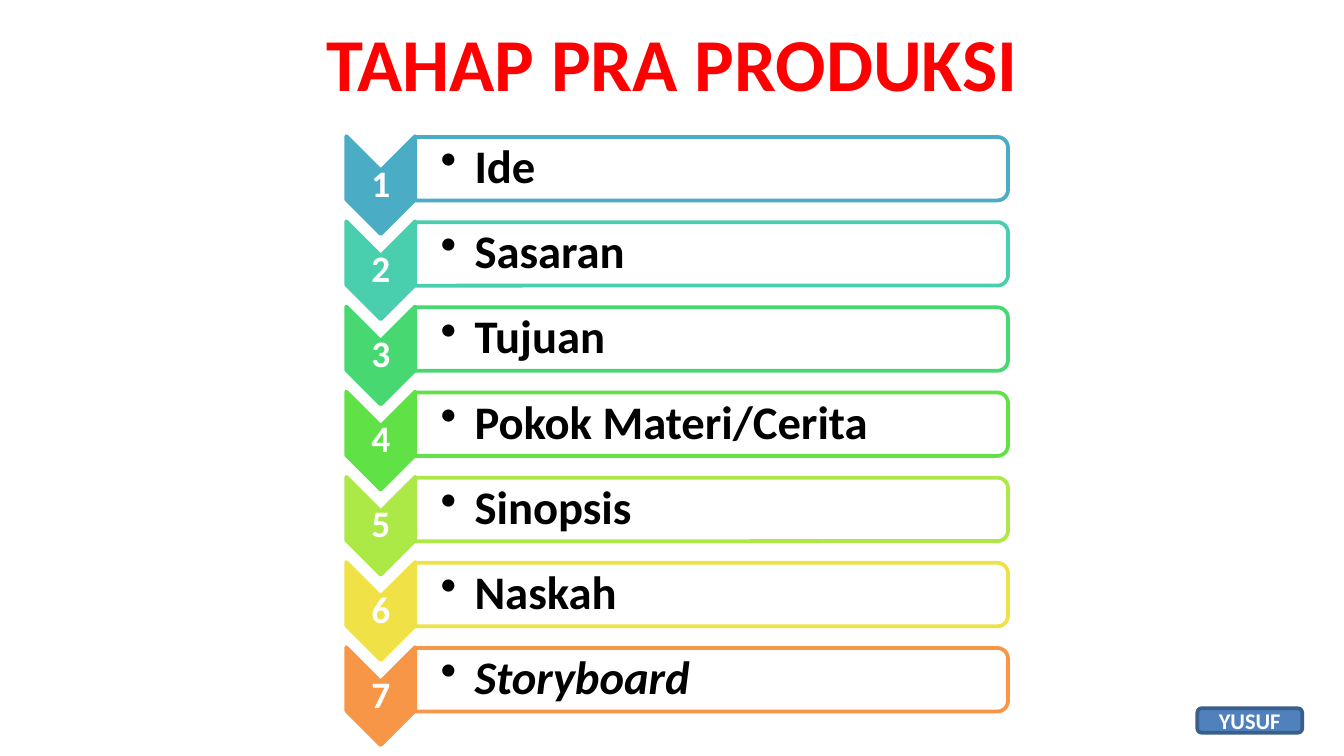
from lxml.etree import SubElement
from pptx import Presentation
from pptx.dml.color import RGBColor
from pptx.enum.shapes import MSO_SHAPE
from pptx.enum.text import MSO_ANCHOR, MSO_AUTO_SIZE, PP_ALIGN
from pptx.oxml.ns import qn
from pptx.util import Cm, Pt

STEPS = [
    ("Ide", "4BACC6"),
    ("Sasaran", "49CFAE"),
    ("Tujuan", "47D872"),
    ("Pokok Materi/Cerita", "60E146"),
    ("Sinopsis", "ACE946"),
    ("Naskah", "F0E146"),
    ("Storyboard", "F79646"),
]
PITCH = 1.61


def color(code):
    return RGBColor.from_string(code)


class Deck:
    face = "Calibri"
    white = "FFFFFF"

    def __init__(self, wide, high):
        self.file = Presentation()
        self.file.slide_width, self.file.slide_height = Cm(wide), Cm(high)
        self.slide = self.file.slides.add_slide(self.file.slide_layouts[5])

    def style(self, para, text, size, ink, align=PP_ALIGN.CENTER):
        para.text, para.alignment = text, align
        font = para.font
        font.name, font.size, font.bold = self.face, Pt(size), True
        font.color.rgb = color(ink)

    def title(self, text, box):
        shape = self.slide.shapes.title
        shape.left, shape.top, shape.width, shape.height = map(Cm, box)
        frame = shape.text_frame
        frame.auto_size = MSO_AUTO_SIZE.NONE
        frame.vertical_anchor = MSO_ANCHOR.TOP
        self.style(frame.paragraphs[0], text, 40, "FF0000")

    def shape(self, kind, box, fill, line, turn=0, alpha=None):
        shape = self.slide.shapes.add_shape(kind, *map(Cm, box))
        shape.rotation = turn
        shape.shadow.inherit = False
        shape.fill.solid()
        shape.fill.fore_color.rgb = color(fill)
        shape.line.color.rgb = color(line)
        shape.line.width = Pt(2)
        if alpha:
            tint = shape._element.spPr.find(qn("a:solidFill")).find(qn("a:srgbClr"))
            SubElement(tint, qn("a:alpha"), val=str(alpha * 1000))
        return shape

    def label(self, box, pad, left):
        frame = self.slide.shapes.add_textbox(*map(Cm, box)).text_frame
        frame.word_wrap = True
        frame.vertical_anchor = MSO_ANCHOR.MIDDLE
        frame.margin_top = frame.margin_bottom = frame.margin_right = Cm(pad)
        frame.margin_left = Cm(left)
        para = frame.paragraphs[0]
        para.line_spacing = 0.9
        return para

    def bullet(self, para, indent):
        props = para._p.get_or_add_pPr()
        props.set("marL", str(Cm(indent)))
        props.set("indent", str(-Cm(indent)))
        SubElement(props, qn("a:buChar"), char="•")

    def step(self, index, text, hue):
        drop = index * PITCH
        # Numbered arrow
        self.shape(MSO_SHAPE.CHEVRON, (6.27, 2.85 + drop, 1.85, 1.3), hue, hue, 90)
        para = self.label((6.55, 3.22 + drop, 1.3, 0.56), 0.03, 0.03)
        self.style(para, str(index + 1), 20, self.white)
        # Bar, rounded on the right
        self.shape(MSO_SHAPE.ROUND_2_SAME_RECTANGLE,
                   (12.85, -2.41 + drop, 1.2, 11.2), self.white, hue, 90, 90)
        para = self.label((7.85, 2.64 + drop, 11.15, 1.09), 0.05, 0.48)
        self.bullet(para, 0.64)
        self.style(para, text, 25, "000000", PP_ALIGN.LEFT)
        para.font.italic = text == "Storyboard"

    def badge(self, text, box):
        shape = self.shape(MSO_SHAPE.ROUNDED_RECTANGLE, box, "4F81BD", "3A5F8C")
        frame = shape.text_frame
        frame.vertical_anchor = MSO_ANCHOR.MIDDLE
        self.style(frame.paragraphs[0], text, 12, self.white)


def main():
    deck = Deck(25.4, 14.29)
    deck.badge("YUSUF", (22.63, 13.39, 1.98, 0.46))
    deck.title("TAHAP PRA PRODUKSI", (1.27, 0.2, 22.86, 1.2))
    for index, (text, hue) in enumerate(STEPS):
        deck.step(index, text, hue)
    deck.file.save("out.pptx")


if __name__ == "__main__":
    main()
